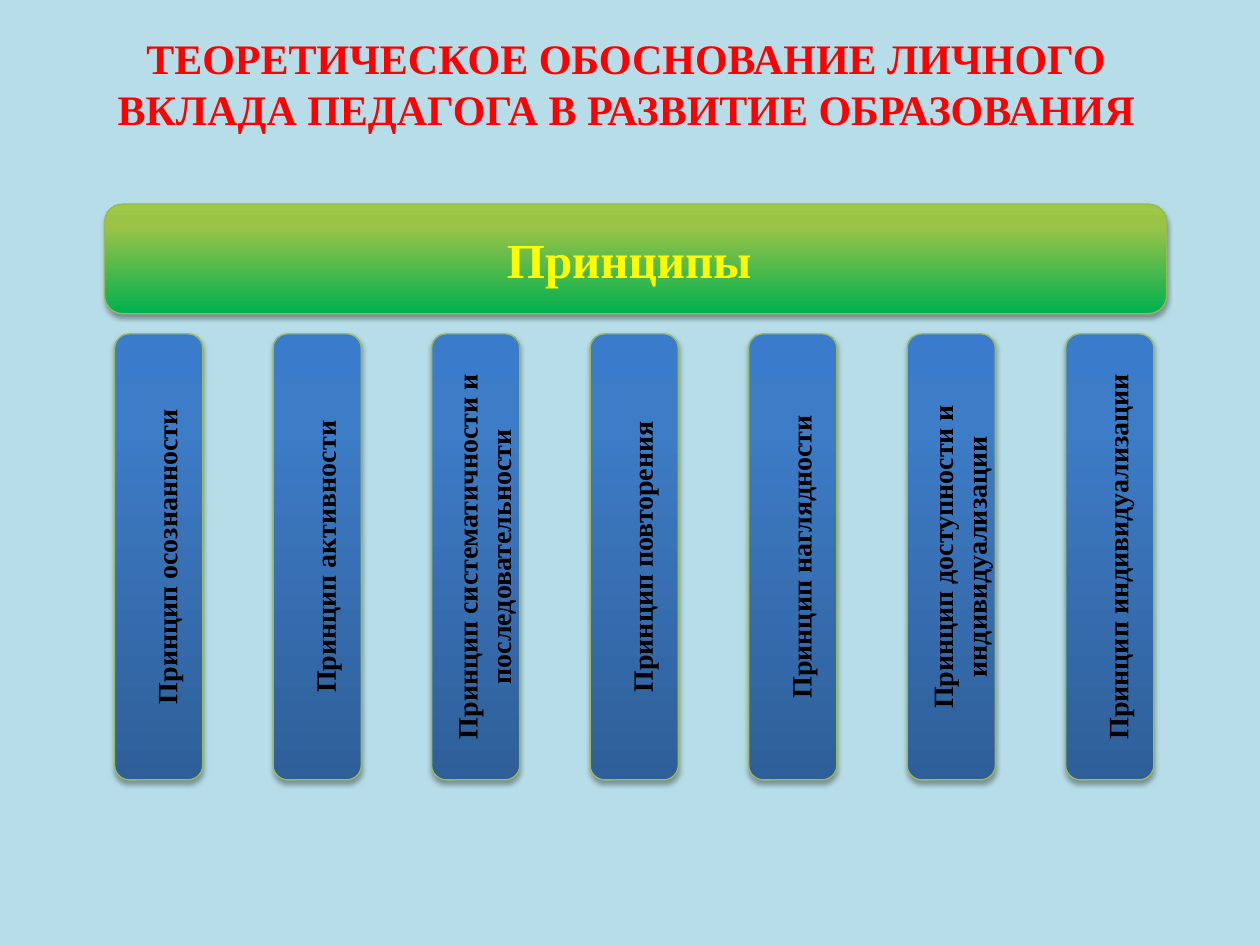
from dataclasses import dataclass

from lxml import etree
from pptx import Presentation
from pptx.dml.color import RGBColor
from pptx.enum.shapes import MSO_SHAPE
from pptx.enum.text import MSO_ANCHOR, PP_ALIGN
from pptx.oxml import parse_xml
from pptx.oxml.ns import nsdecls, qn
from pptx.util import Inches, Pt

ROUND = MSO_SHAPE.ROUNDED_RECTANGLE
MIDDLE = MSO_ANCHOR.MIDDLE
CENTER = PP_ALIGN.CENTER


@dataclass(frozen=True)
class Theme:
    font: str = "Times New Roman"
    back: str = "B7DEE8"
    title: str = "FF0000"
    head: str = "FFFF00"
    label: str = "000000"
    green: tuple = ((0, "00B050"), (80, "9BC348"), (100, "9DC746"))
    blue: tuple = ((0, "2F5F99"), (80, "3D7CC7"), (100, "3A7CCB"))
    green_edge: str = "98B955"
    blue_edge: str = "9BBB59"
    title_size: int = 24
    head_size: int = 28
    label_size: int = 16


class Deck:
    """Places elements on one slide, with boxes in percent of its size."""

    def __init__(self, theme):
        self.theme = theme
        self.prs = Presentation()
        self.prs.slide_width = Inches(10)
        self.prs.slide_height = Inches(7.5)
        self.slide = self.prs.slides.add_slide(self.prs.slide_layouts[6])
        fill = self.slide.background.fill
        fill.solid()
        fill.fore_color.rgb = RGBColor.from_string(theme.back)

    def area(self, box):
        wide, high = self.prs.slide_width, self.prs.slide_height
        return [int(part * size / 100)
                for part, size in zip(box, (wide, high, wide, high))]

    def letter(self, frame, text, size, color):
        """Fill a text frame with one bold centred paragraph."""
        frame.word_wrap = True
        frame.text = text
        para = frame.paragraphs[0]
        para.alignment = CENTER
        font = para.runs[0].font
        font.name, font.size, font.bold = self.theme.font, Pt(size), True
        font.color.rgb = RGBColor.from_string(color)

    def title(self, box, text):
        frame = self.slide.shapes.add_textbox(*self.area(box)).text_frame
        self.letter(frame, text, self.theme.title_size, self.theme.title)

    def panel(self, box, stops, edge):
        """Add a rounded box with an upward gradient and a soft shadow."""
        shape = self.slide.shapes.add_shape(ROUND, *self.area(box))
        shape.line.color.rgb = RGBColor.from_string(edge)
        shape.line.width = Pt(0.75)
        shape.shadow.inherit = False
        marks = "".join(
            f'<a:gs pos="{pos * 1000}"><a:srgbClr val="{color}"/></a:gs>'
            for pos, color in stops)
        props = shape.element.spPr
        props.find(qn("a:prstGeom")).addnext(parse_xml(
            f'<a:gradFill {nsdecls("a")} rotWithShape="1"><a:gsLst>{marks}'
            '</a:gsLst><a:lin ang="16200000" scaled="0"/></a:gradFill>'))
        shade = etree.SubElement(
            props.find(qn("a:effectLst")), qn("a:outerShdw"),
            blurRad=str(Pt(3.1)), dist=str(Pt(1.8)), dir="5400000",
            rotWithShape="0")
        black = etree.SubElement(shade, qn("a:srgbClr"), val="000000")
        etree.SubElement(black, qn("a:alpha"), val="35000")
        shape.text_frame.vertical_anchor = MIDDLE
        return shape

    def header(self, box, text):
        look = self.theme
        frame = self.panel(box, look.green, look.green_edge).text_frame
        frame.margin_right = Inches(0.2)
        self.letter(frame, text, look.head_size, look.head)

    def pillar(self, box, text):
        """Add a tall box whose text reads upward."""
        look = self.theme
        shape = self.panel(box, look.blue, look.blue_edge)
        frame = shape.text_frame
        frame.margin_left, frame.margin_right = Inches(0.12), 0
        shape.element.txBody.bodyPr.set("vert", "vert270")
        self.letter(frame, text, look.label_size, look.label)


LABELS = (
    "Принцип осознанности",
    "Принцип активности",
    "Принцип систематичности и последовательности",
    "Принцип повторения",
    "Принцип наглядности",
    "Принцип доступности и индивидуализации",
    "Принцип индивидуализации",
)
LEFT, STEP = 9.1, 12.58


def main():
    deck = Deck(Theme())
    deck.title((8.3, 2.8, 82.8, 16.13),
               "ТЕОРЕТИЧЕСКОЕ ОБОСНОВАНИЕ ЛИЧНОГО "
               "ВКЛАДА ПЕДАГОГА В РАЗВИТИЕ ОБРАЗОВАНИЯ")
    deck.header((8.3, 21.6, 84.3, 11.6), "Принципы")
    for col, label in enumerate(LABELS):
        deck.pillar((LEFT + col * STEP, 35.33, 7, 47.2), label)
    deck.prs.save("out.pptx")


if __name__ == "__main__":
    main()
